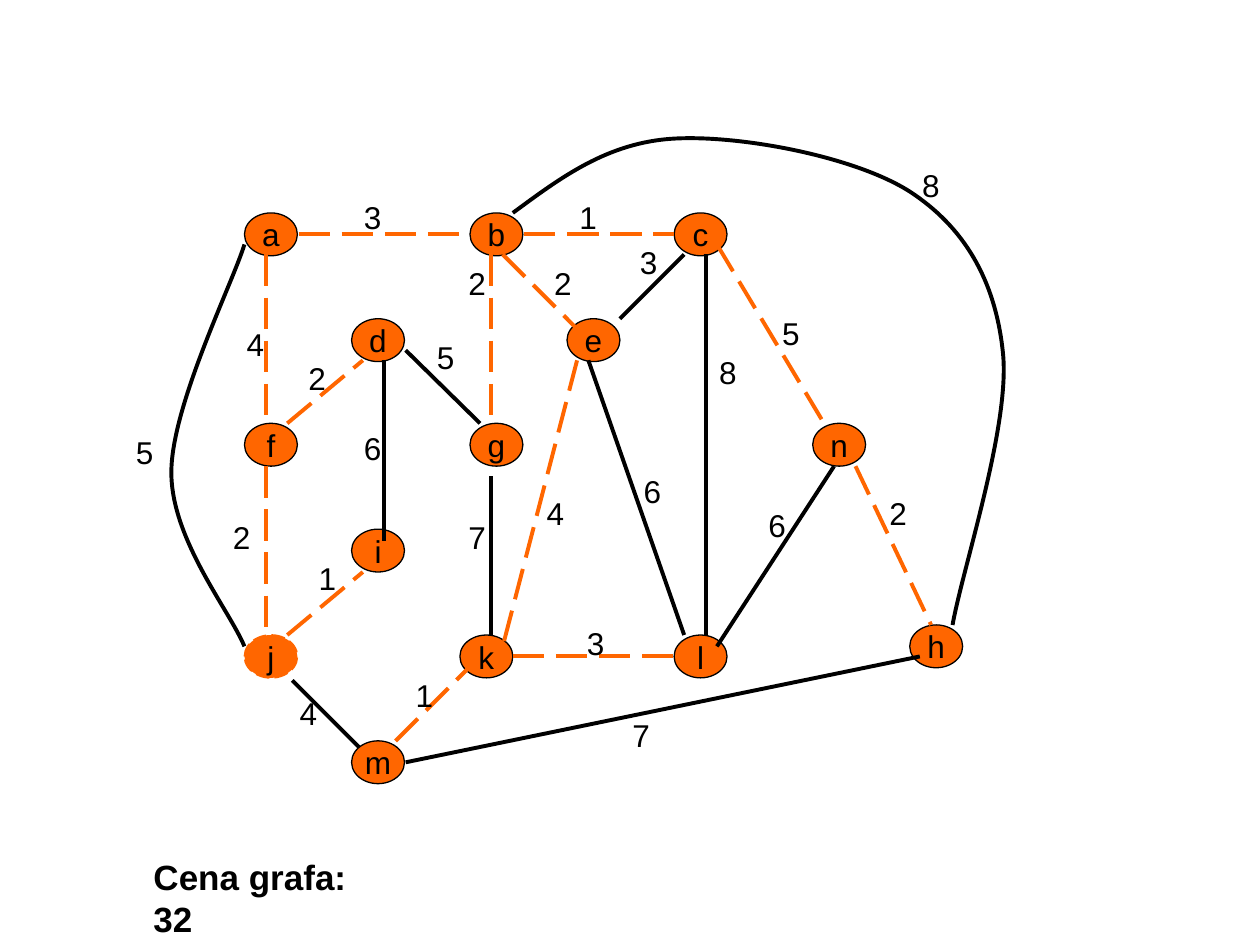
from lxml.etree import SubElement
from pptx import Presentation
from pptx.dml.color import RGBColor
from pptx.enum.dml import MSO_LINE as Dash
from pptx.enum.shapes import MSO_CONNECTOR as Link, MSO_SHAPE as Preset
from pptx.enum.text import MSO_ANCHOR as Anchor, MSO_AUTO_SIZE as AutoSize, PP_ALIGN as Align
from pptx.oxml.ns import qn
from pptx.util import Pt

PX = 9144
BLACK = RGBColor(0, 0, 0)
ORANGE = RGBColor(255, 102, 0)

NODES = {
    "g": (373, 336), "d": (279, 253), "l": (535, 504), "f": (194, 336),
    "a": (194, 169), "m": (279, 588), "i": (279, 420), "b": (373, 169),
    "j": (194, 504), "k": (365, 504), "c": (535, 169), "h": (722, 496),
    "e": (450, 253), "n": (645, 336),
}

EDGE_BEHIND = ((232, 540), (287, 595), "4", (228, 546))
TREE_EDGES = [
    ((237, 186), (373, 186), "3", (279, 152)),
    ((416, 186), (535, 186), "1", (450, 152)),
    ((679, 370), (739, 496), "2", (696, 387)),
    ((314, 588), (373, 529), "1", (320, 532)),
    ((211, 202), (211, 336), "4", (186, 253)),
    ((211, 370), (211, 504), "2", (175, 406)),
    ((228, 504), (288, 454), "1", (243, 439)),
    ((228, 336), (288, 286), "2", (235, 280)),
    ((399, 202), (458, 261), "2", (430, 205)),
    ((390, 202), (390, 336), "2", (362, 205)),
    ((569, 194), (654, 336), "5", (611, 244)),
    ((407, 521), (535, 521), "3", (456, 490)),
    ((458, 286), (399, 513), "4", (424, 387)),
]
OTHER_EDGES = [
    ((543, 202), (492, 253), "3", (498, 188)),
    ((560, 202), (560, 504), "8", (561, 275)),
    ((662, 370), (569, 513), "6", (600, 397)),
    ((305, 286), (305, 429), "6", (279, 336)),
    ((322, 278), (381, 336), "5", (337, 263)),
    ((390, 378), (390, 504), "7", (362, 406)),
    ((467, 286), (543, 504), "6", (501, 370)),
    ((322, 605), (730, 521), "7", (492, 563)),
]
CURVED_EDGES = [
    ([(194, 194), (185, 224), (136, 322), (136, 375),
      (136, 428), (182, 484), (194, 513)], "5", (98, 339)),
    ([(407, 169), (445, 141), (482, 113), (535, 110),
      (587, 107), (678, 124), (722, 152), (765, 180), (790, 222),
      (796, 280), (802, 337), (764, 451), (756, 496)], "8", (722, 127)),
]


def write(frame, text, size=18, bold=False, align=Align.LEFT, anchor=Anchor.TOP, wrap=False):
    frame.word_wrap = wrap
    frame.vertical_anchor = anchor
    paragraph = frame.paragraphs[0]
    paragraph.alignment = align
    run = paragraph.add_run()
    run.text = text
    run.font.name = "Arial"
    run.font.size = Pt(size)
    run.font.bold = bold
    run.font.color.rgb = BLACK


class GraphSlide:
    edge_width = 2.25
    node_size = (42, 34)
    label_size = (34, 40)

    def __init__(self, slide):
        self.slide = slide
        self.graph = slide.shapes.add_group_shape().shapes

    def stroke(self, line, color, width, dashed=False):
        line.color.rgb = color
        line.width = Pt(width)
        if dashed:
            line.dash_style = Dash.LONG_DASH

    def node(self, name, corner, dashed=False):
        ellipse = self.graph.add_shape(Preset.OVAL, *(v * PX for v in corner + self.node_size))
        ellipse.shadow.inherit = False
        ellipse.fill.solid()
        ellipse.fill.fore_color.rgb = ORANGE
        self.stroke(ellipse.line, ORANGE if dashed else BLACK, 1 if dashed else 0.75, dashed)
        write(ellipse.text_frame, name, align=Align.CENTER, anchor=Anchor.MIDDLE)

    def edge(self, start, end, in_tree=False):
        link = self.graph.add_connector(Link.STRAIGHT, *(v * PX for v in start + end))
        self.stroke(link.line, ORANGE if in_tree else BLACK, self.edge_width, in_tree)
        SubElement(link._element.spPr, qn("a:effectLst"))

    def curve(self, points):
        builder = self.graph.build_freeform(*points[0], scale=PX)
        builder.add_line_segments(points[1:], close=False)
        arc = builder.convert_to_shape()
        arc.shadow.inherit = False
        arc.fill.background()
        self.stroke(arc.line, BLACK, self.edge_width)
        segments = arc._element.xpath(".//a:lnTo")
        outline = segments[0].getparent()
        for first in range(0, len(segments), 3):
            bezier = SubElement(outline, qn("a:cubicBezTo"))
            for segment in segments[first:first + 3]:
                bezier.append(segment[0])
                outline.remove(segment)

    def weight(self, value, corner):
        label = self.graph.add_textbox(*(v * PX for v in corner + self.label_size))
        write(label.text_frame, value)
        label.text_frame.auto_size = AutoSize.SHAPE_TO_FIT_TEXT

    def total(self, text, box):
        caption = self.slide.shapes.add_textbox(*(v * PX for v in box))
        write(caption.text_frame, text, size=20, bold=True, wrap=True)
        caption.text_frame.auto_size = AutoSize.SHAPE_TO_FIT_TEXT


def main():
    deck = Presentation()
    deck.slide_width, deck.slide_height = 1000 * PX, 750 * PX
    page = GraphSlide(deck.slides.add_slide(deck.slide_layouts[6]))

    page.edge(*EDGE_BEHIND[:2])
    for name, corner in NODES.items():
        page.node(name, corner, dashed=name == "j")
    for edges, in_tree in ((TREE_EDGES, True), (OTHER_EDGES, False)):
        for start, end, _, _ in edges:
            page.edge(start, end, in_tree)
    for points, _, _ in CURVED_EDGES:
        page.curve(points)
    for *_, value, corner in [EDGE_BEHIND] + TREE_EDGES + OTHER_EDGES + CURVED_EDGES:
        page.weight(value, corner)
    page.total("Cena grafa: 32", (112, 674, 210, 43))

    deck.save("out.pptx")


if __name__ == "__main__":
    main()
